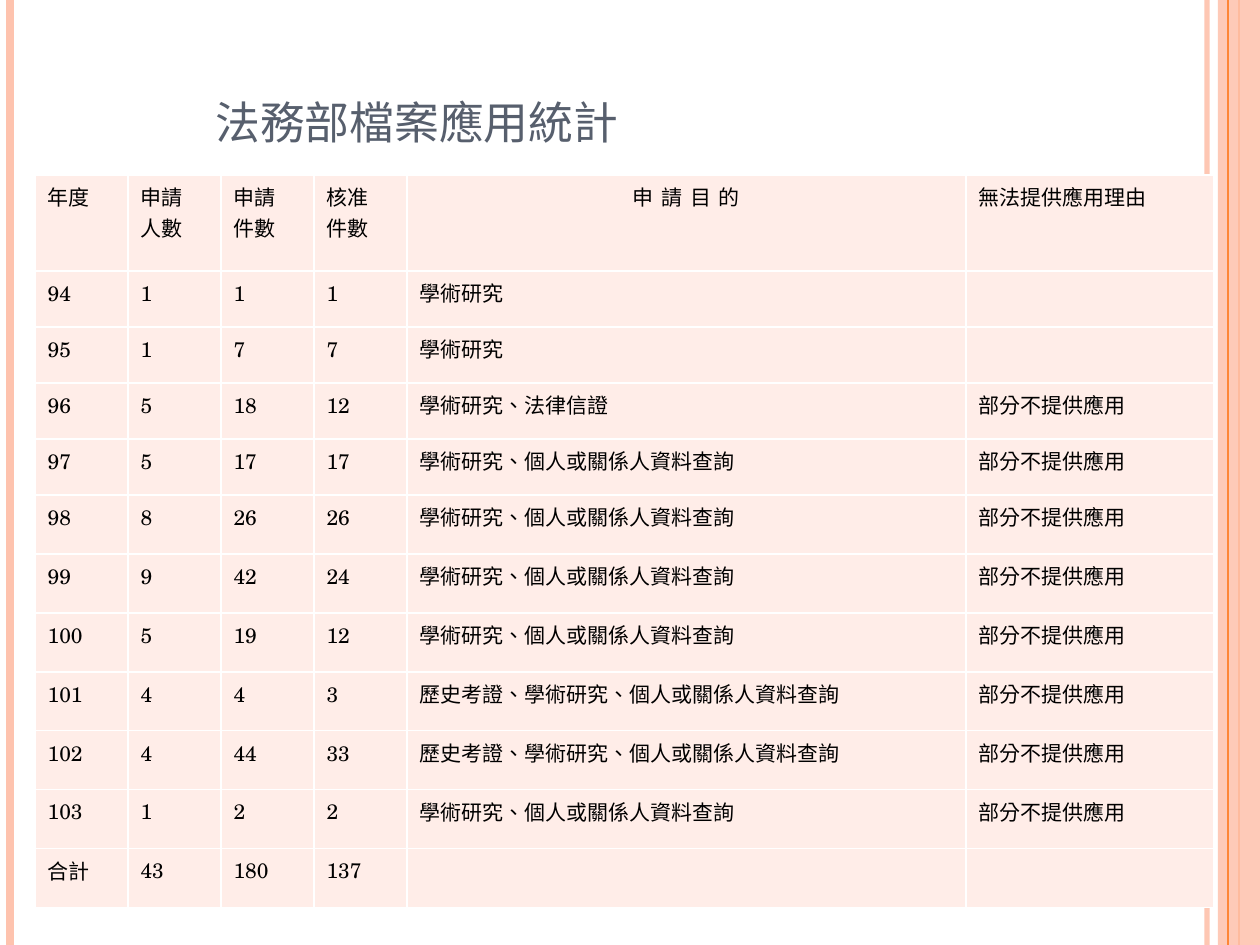
from lxml import etree
from pptx import Presentation
from pptx import util as u
from pptx.dml.color import RGBColor
from pptx.enum import shapes, text
from pptx.oxml.ns import qn

COLORS = {"peach": "FEC3AE", "orange": "FE8637", "slate": "575F6D",
          "cell": "FFEDE8", "white": "FFFFFF", "black": "000000"}
CJK = "Noto Sans CJK SC"
SERIF = "TeX Gyre Schola"

RESEARCH = "學術研究"
INQUIRY = RESEARCH + "、個人或關係人資料查詢"
HISTORY = "歷史考證、" + INQUIRY
PARTIAL = "部分不提供應用"
ROWS = [
    ("年度", "申請\n人數", "申請\n件數", "核准\n件數", "申 請 目 的", "無法提供應用理由"),
    ("94", "1", "1", "1", RESEARCH, ""),
    ("95", "1", "7", "7", RESEARCH, ""),
    ("96", "5", "18", "12", "學術研究、法律信證", PARTIAL),
    ("97", "5", "17", "17", INQUIRY, PARTIAL),
    ("98", "8", "26", "26", INQUIRY, PARTIAL),
    ("99", "9", "42", "24", INQUIRY, PARTIAL),
    ("100", "5", "19", "12", INQUIRY, PARTIAL),
    ("101", "4", "4", "3", HISTORY, PARTIAL),
    ("102", "4", "44", "33", HISTORY, PARTIAL),
    ("103", "1", "2", "2", INQUIRY, PARTIAL),
    ("合計", "43", "180", "137", "", ""),
]
COLUMN_WIDTHS = [93] * 4 + [559, 248]
ROW_HEIGHTS = [96] + [56] * 4 + [59] * 7


def px(value):
    """Turn pixels at 126 to the inch into EMU."""
    return u.Emu(round(value * 914400 / 126))


def rgb(name):
    """Look up a colour by name."""
    return RGBColor.from_string(COLORS[name])


def set_alpha(element, percent):
    """Give the first solid colour under an element an opacity."""
    color = next(element.iter(qn("a:srgbClr")))
    etree.SubElement(color, qn("a:alpha"), val=str(percent * 1000))


def write_text(frame, content, size=12, font=SERIF, color="black", align=None,
               small_caps=False, spacing=0):
    """Write one paragraph per line of content in a single format."""
    for index, line in enumerate(content.split("\n")):
        para = frame.add_paragraph() if index else frame.paragraphs[0]
        para.alignment = align
        if not line:
            etree.SubElement(para._p, qn("a:endParaRPr"), sz=str(size * 100))
            continue
        span = para.add_run()
        span.text = line
        span.font.size = u.Pt(size)
        span.font.color.rgb = rgb(color)
        span.font.name = font
        props = span.font._element
        etree.SubElement(props, qn("a:ea"), typeface=CJK)
        props.set("lang", "zh-TW")
        if small_caps:
            props.set("cap", "small")
        if spacing:
            props.set("spc", str(spacing))


def add_stripe(page, x, color, width, alpha=100):
    """Draw a full-height vertical line."""
    line = page.shapes.add_connector(
        shapes.MSO_CONNECTOR.STRAIGHT, px(x), px(0), px(x), px(945))
    line.line.color.rgb = rgb(color)
    line.line.width = u.Pt(width)
    etree.SubElement(line._element.spPr, qn("a:effectLst"))
    if alpha < 100:
        set_alpha(line._element.spPr, alpha)


def add_band(page, x, width, color, alpha):
    """Draw a full-height translucent band."""
    band = page.shapes.add_shape(
        shapes.MSO_SHAPE.RECTANGLE, px(x), px(0), px(width), px(945))
    band.shadow.inherit = False
    band.fill.solid()
    band.fill.fore_color.rgb = rgb(color)
    band.line.fill.background()
    set_alpha(band._element.spPr, alpha)


def add_title(page, content):
    """Place the title at the bottom of its box."""
    box = page.shapes.add_textbox(px(203), px(0), px(1134), px(157))
    frame = box.text_frame
    frame.word_wrap = True
    frame.vertical_anchor = text.MSO_ANCHOR.BOTTOM
    write_text(frame, content, size=32, font=CJK, color="slate", small_caps=True)


def style_cell(cell):
    """Give a cell white borders and the pale fill."""
    props = cell._tc.get_or_add_tcPr()
    for side in ("lnL", "lnR", "lnT", "lnB"):
        border = etree.SubElement(props, qn("a:" + side), w=str(u.Pt(1)))
        fill = etree.SubElement(border, qn("a:solidFill"))
        etree.SubElement(fill, qn("a:srgbClr"), val=COLORS["white"])
    cell.fill.solid()
    cell.fill.fore_color.rgb = rgb("cell")


def add_statistics(page):
    """Build the table of applications by year."""
    frame = page.shapes.add_table(
        len(ROWS), len(COLUMN_WIDTHS), px(35), px(175),
        px(sum(COLUMN_WIDTHS)), px(sum(ROW_HEIGHTS)))
    table = frame.table
    for column, width in zip(table.columns, COLUMN_WIDTHS):
        column.width = px(width)
    for row, height, values in zip(table.rows, ROW_HEIGHTS, ROWS):
        row.height = px(height)
        for cell, value in zip(row.cells, values):
            style_cell(cell)
            purpose_header = value == ROWS[0][4]
            write_text(cell.text_frame, value,
                       align=text.PP_ALIGN.CENTER if purpose_header else None,
                       spacing=90 if purpose_header else 0)


def main():
    """Build and save the slide."""
    deck = Presentation()
    deck.slide_width, deck.slide_height = px(1260), px(945)
    page = deck.slides.add_slide(deck.slide_layouts[6])
    add_stripe(page, 1207, "peach", 3, alpha=93)
    add_stripe(page, 10, "peach", 4.5)
    add_stripe(page, 1239, "orange", 1.5)
    add_band(page, 1218, 42, "peach", 87)
    add_stripe(page, 1228, "orange", 0.75)
    add_title(page, "法務部檔案應用統計")
    add_statistics(page)
    deck.save("out.pptx")


if __name__ == "__main__":
    main()
